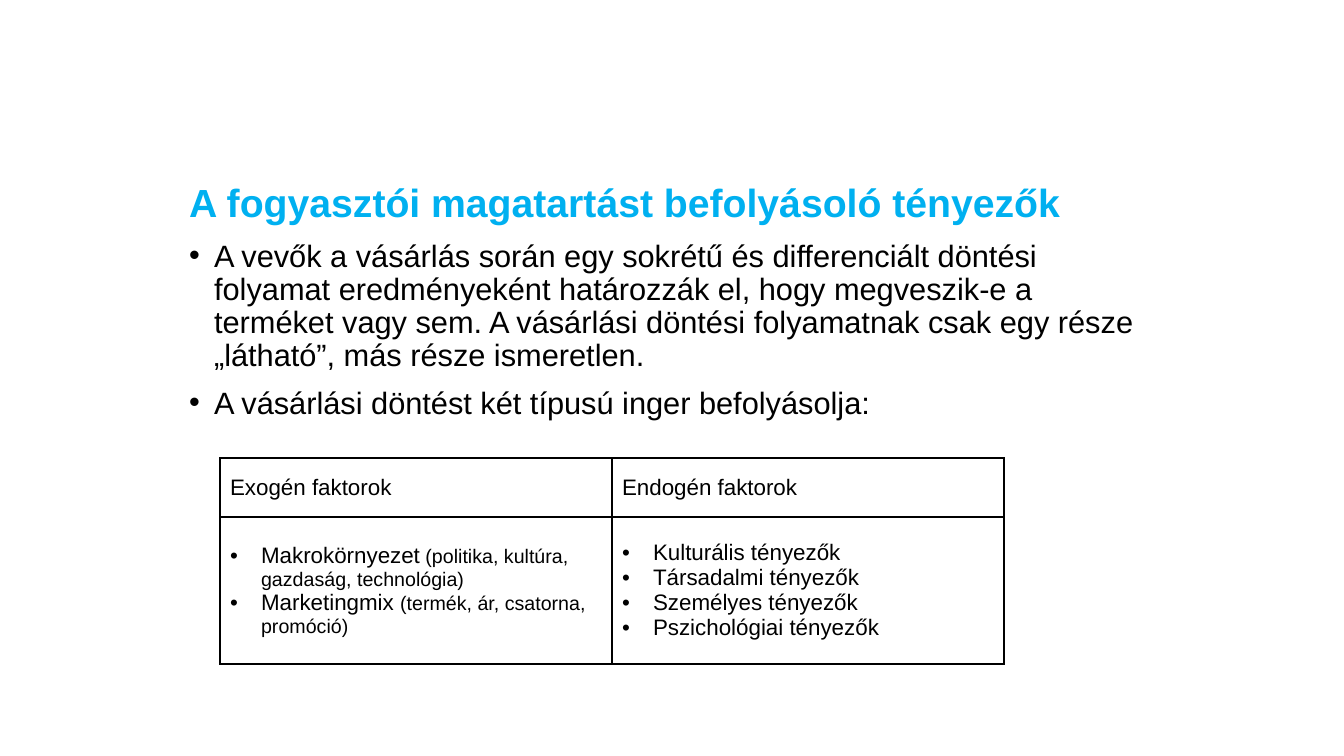
import pptx
import pptx.dml.color
import pptx.enum.text
import pptx.oxml.ns
import pptx.util
import lxml.etree


def tint(code):
    return pptx.dml.color.RGBColor.from_string(code)


def add_tag(node, name, **attrs):
    tag = pptx.oxml.ns.qn(name)
    return lxml.etree.SubElement(node, tag, {key: str(val) for key, val in attrs.items()})


def write(par, text, size=16, color="000000", bold=False):
    run = par.add_run()
    run.text = text
    run.font.name = "Arial"
    run.font.size = pptx.util.Pt(size)
    run.font.bold = bold
    run.font.color.rgb = tint(color)


class Page:
    """Holds the style and the current slide, with a method for each kind of element."""

    scale = pptx.util.Inches(1) / 100.8
    ink = "000000"
    accent = "00B0F0"

    def __init__(self, deck):
        deck.slide_width, deck.slide_height = self.px(1344), self.px(756)
        self.slide = deck.slides.add_slide(deck.slide_layouts[1])
        title = self.slide.shapes.title.element
        title.getparent().remove(title)

    def px(self, count):
        return pptx.util.Emu(round(count * self.scale))

    def fill(self, frame, pars, indent, space=0, line=1.0):
        for num, (mark, runs) in enumerate(pars):
            par = frame.add_paragraph() if num else frame.paragraphs[0]
            props = par._p.get_or_add_pPr()
            hang = self.px(indent) if mark else 0
            props.set("marL", str(hang))
            props.set("indent", str(-hang))
            if mark:
                add_tag(props, "a:buFont", typeface="Arial")
                add_tag(props, "a:buChar", char="•")
            else:
                add_tag(props, "a:buNone")
            par.line_spacing = line
            par.space_before = pptx.util.Pt(space if num else 0)
            for text, style in runs:
                write(par, text, **style)

    def body(self, left, top, width, height, pars):
        box = self.slide.placeholders[1]
        box.left, box.top = self.px(left), self.px(top)
        box.width, box.height = self.px(width), self.px(height)
        frame = box.text_frame
        frame.word_wrap = True
        frame.auto_size = pptx.enum.text.MSO_AUTO_SIZE.NONE
        frame.vertical_anchor = pptx.enum.text.MSO_ANCHOR.TOP
        self.fill(frame, pars, indent=25, space=10, line=0.9)

    def border(self, cell):
        props = cell._tc.get_or_add_tcPr()
        for side in "LRTB":
            edge = add_tag(props, f"a:ln{side}", w=pptx.util.Pt(1))
            paint = add_tag(edge, "a:solidFill")
            add_tag(paint, "a:srgbClr", val=self.ink)

    def table(self, left, top, width, heights, rows):
        count = len(rows[0])
        shape = self.slide.shapes.add_table(
            len(rows), count, self.px(left), self.px(top),
            self.px(width * count), self.px(sum(heights)))
        table = shape.table
        table.first_row = table.horz_banding = False
        for col in table.columns:
            col.width = self.px(width)
        for row, height, cells in zip(table.rows, heights, rows):
            row.height = self.px(height)
            for cell, pars in zip(row.cells, cells):
                self.border(cell)
                cell.fill.background()
                cell.vertical_anchor = pptx.enum.text.MSO_ANCHOR.MIDDLE
                self.fill(cell.text_frame, pars, indent=31)


def main():
    deck = pptx.Presentation()
    page = Page(deck)
    head = {"size": 28, "color": page.accent, "bold": True}
    main_style = {"size": 22}
    small = {"size": 14}
    page.body(179, 179, 977, 535, [
        (False, [("A fogyasztói magatartást befolyásoló tényezők", head)]),
        (True, [("A vevők a vásárlás során egy sokrétű és differenciált döntési folyamat "
                 "eredményeként határozzák el, hogy megveszik-e a terméket vagy sem. "
                 "A vásárlási döntési folyamatnak csak egy része „látható”, "
                 "más része ismeretlen.", main_style)]),
        (True, [("A vásárlási döntést két típusú inger befolyásolja:", main_style)]),
    ])
    outer = [
        (True, [("Makrokörnyezet", {}),
                (" (politika, kultúra, gazdaság, technológia)", small)]),
        (True, [("Marketingmix ", {}), ("(termék, ár, csatorna, promóció)", small)]),
    ]
    inner = [(True, [(f"{kind} tényezők", {})])
             for kind in ("Kulturális", "Társadalmi", "Személyes", "Pszichológiai")]
    heads = [[(False, [(f"{kind} faktorok", {})])] for kind in ("Exogén", "Endogén")]
    page.table(220, 458, 392, [59, 147], [heads, [outer, inner]])
    deck.save("out.pptx")


if __name__ == "__main__":
    main()
